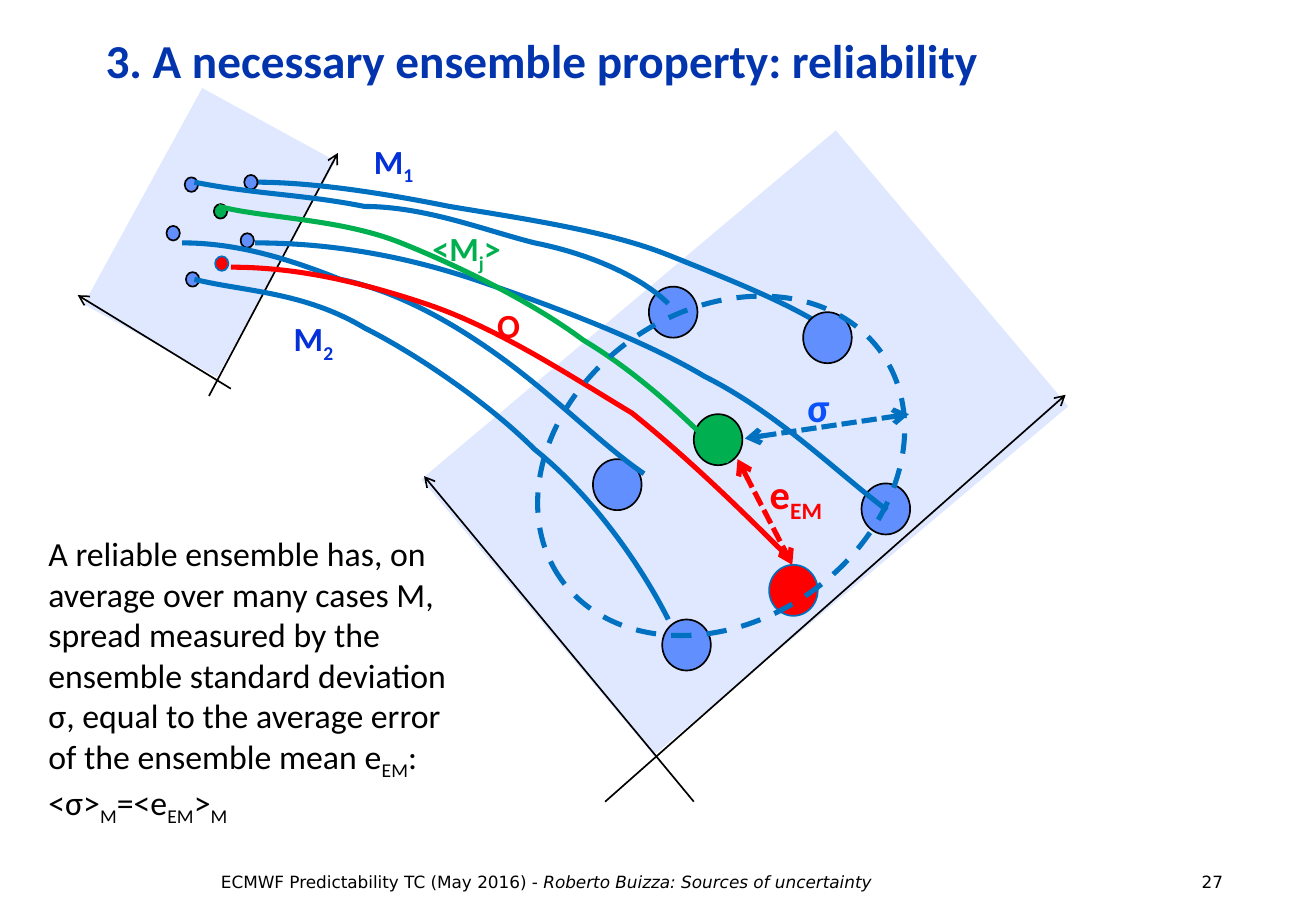
from pptx import Presentation
from pptx.dml.color import RGBColor
from pptx.enum.dml import MSO_LINE as Dash
from pptx.enum.shapes import MSO_CONNECTOR as Link, MSO_SHAPE as Shape
from pptx.enum.text import MSO_ANCHOR as Anchor, MSO_AUTO_SIZE as Fit, PP_ALIGN as Align
from pptx.oxml.ns import qn
from pptx.util import Inches, Pt
from lxml.etree import SubElement

THEME = {
    "black": RGBColor.from_string("000000"),
    "title": RGBColor.from_string("0234AD"),
    "member label": RGBColor.from_string("0330D8"),
    "spread label": RGBColor.from_string("0B52FC"),
    "member": RGBColor.from_string("618FFD"),
    "path": RGBColor.from_string("0070C0"),
    "mean": RGBColor.from_string("00B050"),
    "observed": RGBColor.from_string("FF0000"),
    "font": "Calibri", "footer font": "DejaVu Sans",
    "title size": Pt(28), "symbol size": Pt(24), "text size": Pt(20), "footer size": Pt(10),
    "thin": Pt(1), "thick": Pt(3),
}

# Grid of square cells: 108.3 columns by 75 rows
COLUMNS, ROWS = 108.3, 75
CELL = Inches(0.1)

deck = Presentation()
deck.slide_width, deck.slide_height = int(COLUMNS * CELL), ROWS * CELL
slide = deck.slides.add_slide(deck.slide_layouts[6])
shapes = slide.shapes


def outline(part, colour, width="thin", dash=None, ends=()):
    """Line of a shape or connector, with arrowheads at the named ends and no shadow."""
    part.line.color.rgb = THEME[colour]
    part.line.width = THEME[width]
    if dash:
        part.line.dash_style = dash
    for end in ends:
        SubElement(part.line._ln, qn(f"a:{end}"), type="arrow")
    SubElement(part._element.spPr, qn("a:effectLst"))


def write(box, pieces, colour, size="text size", bold=True, wrap=False,
          align=Align.CENTER, face="font", accent="subscript"):
    """Text box whose every second piece is a subscript or italic."""
    frame = shapes.add_textbox(*(int(n * CELL) for n in box)).text_frame
    frame.word_wrap, frame.auto_size = wrap, Fit.SHAPE_TO_FIT_TEXT
    paragraph = frame.paragraphs[0]
    paragraph.alignment = align
    look = {"name": THEME[face], "size": THEME[size], "bold": bold}
    for index, piece in enumerate(pieces):
        run = paragraph.add_run()
        run.text = piece
        for key, value in look.items():
            setattr(run.font, key, value)
        run.font.color.rgb = THEME[colour]
        if index % 2 and accent == "subscript":
            run._r.get_or_add_rPr().set("baseline", "-25000")
        elif index % 2:
            run.font.italic = True
    return frame


# Phase-space planes at initial and final time, each with two axes
PLANES = [
    ((7.1, 12.9, 20.3, 12.5), 298.7, [(17.2, 32.6, 27.8, 12.6), (19, 32, 6.4, 24.3)]),
    ((39, 21.6, 44.6, 29.7), 319.9, [(49.8, 66, 87.7, 32.5), (57.1, 66, 34.9, 39.2)]),
]
for box, turn, axes in PLANES:
    plane = shapes.add_shape(Shape.RECTANGLE, *(int(n * CELL) for n in box))
    plane.rotation = turn
    plane.shadow.inherit = False
    plane.line.fill.background()
    plane.fill.solid()
    plane.fill.fore_color.rgb = THEME["member"]
    tint = plane._element.spPr.find(f"{qn('a:solidFill')}/{qn('a:srgbClr')}")
    SubElement(tint, qn("a:alpha"), val="20000")
    for ends in axes:
        axis = shapes.add_connector(Link.STRAIGHT, *(int(n * CELL) for n in ends))
        outline(axis, "black", ends=["tailEnd"])

# Title
title = write((7.7, 1.7, 99.2, 6.7), ["3. A necessary ensemble property: reliability"],
              "title", "title size", wrap=True, align=Align.LEFT)
title.auto_size = Fit.NONE
title.vertical_anchor = Anchor.MIDDLE
title.paragraphs[0].line_spacing = Pt(32)

# States: large at final time, small at initial time
STATES = {
    (4, 4.2): [(53.4, 23.6, "member"), (48.8, 37.8, "member"), (54.5, 51, "member"),
               (70.9, 39.8, "member"), (66.1, 25.7, "member"),
               (63.3, 46.5, "observed"), (57.1, 34.1, "mean")],
    (1.1, 1.2): [(15.2, 14.6, "member"), (13.7, 18.6, "member"), (15.3, 22.4, "member"),
                 (19.8, 19.2, "member"), (20.1, 14.4, "member"),
                 (17.7, 21.1, "observed"), (17.6, 16.8, "mean")],
}
states = []
for (width, height), places in STATES.items():
    for left, top, role in places:
        state = shapes.add_shape(Shape.OVAL, *(int(n * CELL) for n in (left, top, width, height)))
        state.fill.solid()
        state.fill.fore_color.rgb = THEME[role]
        outline(state, "path" if role == "observed" else "black")
        states.append(state)

# Trajectories: one shared bend, stretched between start and end
BEND = [(0.11, 0.02), (0.23, 0.05), (0.35, 0.14), (0.47, 0.22), (0.61, 0.36),
        (0.72, 0.51), (0.83, 0.65), (0.93, 0.86), (1, 1)]
TRAJECTORIES = [
    (20.9, 15, 68.1, 26.8, "path"),
    (16.3, 15.4, 55.4, 24.7, "path"),
    (20.9, 19.8, 72.9, 41.9, "path"),
    (14.7, 19.8, 52.7, 39.4, "path"),
    (15.8, 23.1, 55.4, 51, "path"),
    (17.7, 17.4, 60.4, 38.1, "mean"),
    (18.8, 21.7, 65.2, 46.5, "observed"),
]
for index, (x0, y0, x1, y1, colour) in enumerate(TRAJECTORIES):
    builder = shapes.build_freeform(x0, y0, scale=CELL)
    builder.add_line_segments(
        [(x0 + u * (x1 - x0), y0 + v * (y1 - y0)) for u, v in BEND], close=False)
    trajectory = builder.convert_to_shape()
    trajectory.fill.background()
    outline(trajectory, colour, "thick")
    # Every three points make one Bézier segment
    route = next(trajectory._element.iter(qn("a:path")))
    for step, segment in enumerate(route.findall(qn("a:lnTo"))):
        if step % 3 == 0:
            curve = SubElement(route, qn("a:cubicBezTo"))
        curve.append(segment[0])
        route.remove(segment)
    if index == 0:  # the first member passes behind the states
        states[0]._element.addprevious(trajectory._element)

# Trajectory labels
write((29.7, 11.1, 5.4, 4.4), ["M", "1"], "member label")
write((34.5, 18.3, 7.8, 4.4), ["<M", "j", ">"], "mean")
write((23.1, 25.7, 5.4, 4.4), ["M", "2"], "member label")
write((39.9, 24.6, 3.9, 4.4), ["O"], "observed")

# Ensemble spread and error of the ensemble mean
spread = shapes.add_shape(Shape.OVAL, *(int(n * CELL) for n in (43.2, 25.6, 32.3, 25.5)))
spread.rotation = 324.8
spread.fill.background()
outline(spread, "path", "thick", Dash.DASH)
for ends, colour in [((61.3, 36.1, 74.8, 34.1), "path"), ((60.7, 37.8, 65.2, 46.5), "observed")]:
    distance = shapes.add_connector(Link.STRAIGHT, *(int(n * CELL) for n in ends))
    outline(distance, colour, "thick", Dash.SQUARE_DOT, ["headEnd", "tailEnd"])

# Definition of reliability
write((3, 43.4, 35.4, 24.6),
      ["A reliable ensemble has, on average over many cases M, spread measured by the "
       "ensemble standard deviation σ, equal to the average error of the ensemble mean e",
       "EM", ": <σ>", "M", "=<e", "EM", ">", "M"],
      "black", bold=False, wrap=True, align=Align.LEFT)
write((65.4, 31, 3.9, 5), ["σ"], "spread label", "symbol size")
write((62.1, 38.1, 6.8, 5), ["e", "EM"], "observed", "symbol size")

# Footer with the page number on a tab stop
footer = write((17.2, 71.3, 90.1, 2.7),
               ["ECMWF Predictability TC (May 2016) - ",
                "Roberto Buizza: Sources of uncertainty", "\t27"],
               "black", "footer size", bold=False, wrap=True, align=Align.LEFT,
               face="footer font", accent="italic")
stops = SubElement(footer.paragraphs[0]._p.get_or_add_pPr(), qn("a:tabLst"))
SubElement(stops, qn("a:tab"), pos=str(int(80.7 * CELL)), algn="l")

deck.save("out.pptx")
